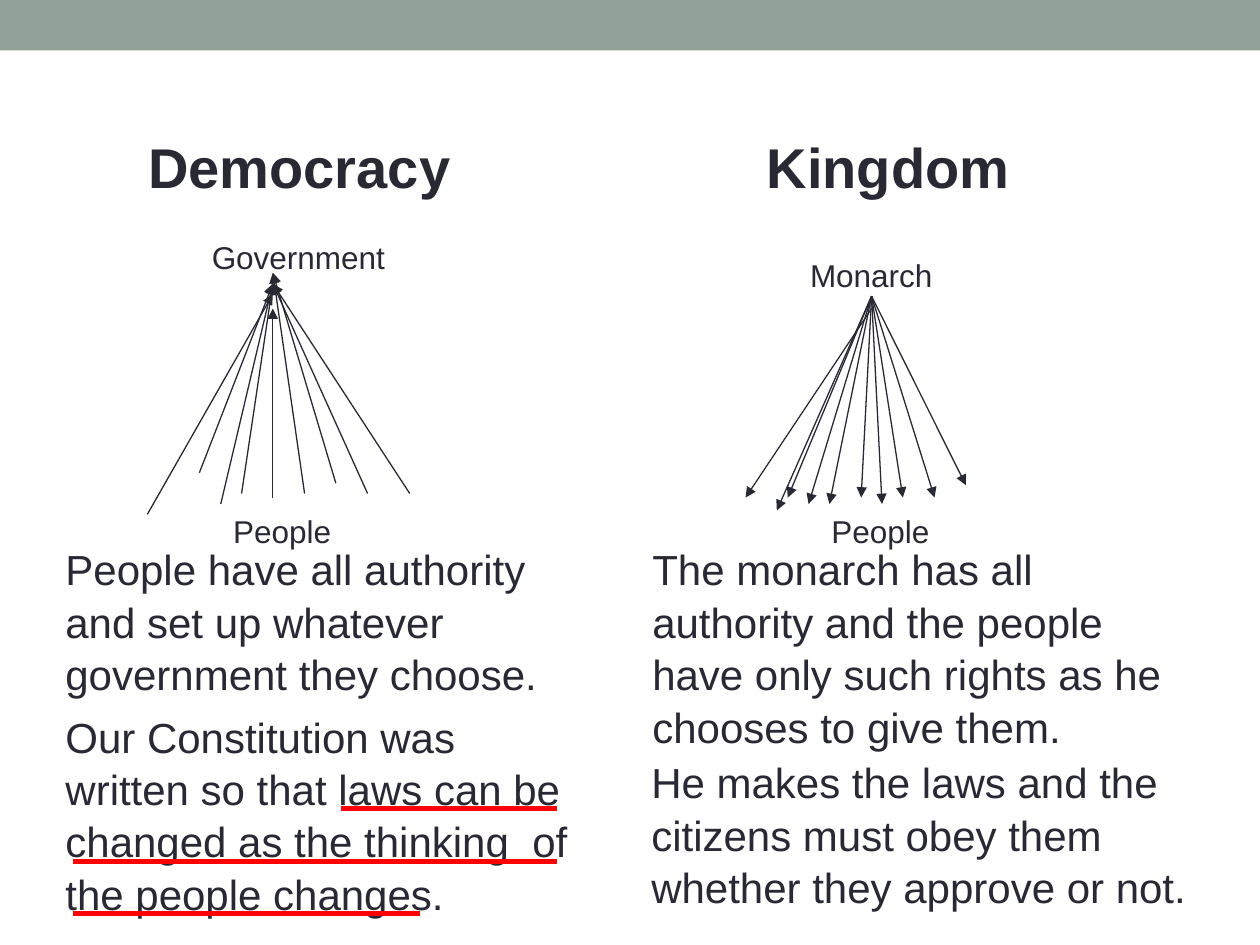
"""Build a slide that contrasts a democracy with a kingdom."""
from lxml.etree import SubElement
from pptx import Presentation
from pptx.dml.color import RGBColor
from pptx.enum.shapes import MSO_CONNECTOR, MSO_SHAPE
from pptx.oxml.ns import qn
from pptx.util import Cm, Pt

INK, RED, SAGE = "292934", "FF0000", "93A299"

HEADS = [
    ("Democracy", 2.74, 2.49, 7.32, 1.63),
    ("Kingdom", 15.21, 2.49, 7.19, 1.63),
]
LABELS = [
    ("Government", 4.02, 4.65, 4.88, 1.02),
    ("People", 4.45, 10.16, 2.97, 1.02),
    ("Monarch", 16.08, 5.0, 4.24, 1.02),
    ("People", 16.51, 10.16, 3.81, 1.02),
]
NOTES = [
    ("People have all authority and set up whatever government they choose.",
     1.07, 10.8, 11.23, 4.5),
    ("Our Constitution was written so that laws can be changed as the "
     "thinking  of the people changes.", 1.07, 14.17, 11.0, 4.6),
    ("The monarch has all authority and the people have only such rights "
     "as he chooses to give them.", 12.9, 10.8, 11.18, 4.37),
    ("He makes the laws and the citizens must obey them whether they "
     "approve or not.", 12.88, 15.09, 11.68, 3.33),
]
TEXTS = [(HEADS, 32, True), (LABELS, 18, False), (NOTES, 24, False)]

GOV_X, KING_X = 5.5, 17.57
VOTERS = [
    (2.97, 10.37, 5.93), (4.02, 9.53, 5.72), (4.45, 10.16, 5.72),
    (4.87, 9.95, 5.72), (5.5, 10.03, 6.22), (6.14, 9.95, 5.5),
    (6.77, 9.74, 5.5), (7.41, 9.95, 5.72), (8.26, 9.95, 5.72),
]
SUBJECTS = [
    (15.03, 10.03, 6.22), (15.66, 10.29, 5.97), (15.88, 10.03, 5.97),
    (16.3, 10.16, 5.97), (16.72, 10.16, 5.97), (17.36, 10.03, 5.97),
    (17.78, 10.16, 5.97), (18.2, 10.03, 5.97), (18.84, 10.03, 5.97),
    (19.47, 9.78, 5.97),
]
MARKS = [(6.88, 11.22, 16.3), (1.48, 11.22, 17.36), (1.48, 8.47, 18.42)]


def paint(color, code):
    """Set a colour format from a hex string."""
    color.rgb = RGBColor.from_string(code)


def write(slide, text, box, size, bold):
    """Add a wrapped text box."""
    frame = slide.shapes.add_textbox(*map(Cm, box)).text_frame
    frame.word_wrap = True
    frame.text = text
    para = frame.paragraphs[0]
    para.line_spacing = 1.04
    font = para.runs[0].font
    font.name, font.size, font.bold = "Arial", Pt(size), bold
    paint(font.color, INK)


def draw(slide, start, end, code, width, arrow=False):
    """Add a straight line, with an arrowhead at its end if asked."""
    link = slide.shapes.add_connector(
        MSO_CONNECTOR.STRAIGHT, *map(Cm, start + end))
    paint(link.line.color, code)
    link.line.width = Pt(width)
    if arrow:
        SubElement(link.line._get_or_add_ln(), qn("a:tailEnd"), type="triangle")
    SubElement(link._element.spPr, qn("a:effectLst"))


def main():
    """Build and save the slide."""
    deck = Presentation()
    deck.slide_width, deck.slide_height = Cm(25.4), Cm(19.05)
    slide = deck.slides.add_slide(deck.slide_layouts[6])

    band = slide.shapes.add_shape(
        MSO_SHAPE.RECTANGLE, 0, 0, deck.slide_width, Cm(1.02))
    band.shadow.inherit = False
    band.fill.solid()
    paint(band.fill.fore_color, SAGE)
    band.line.fill.background()

    for group, size, bold in TEXTS:
        for text, *box in group:
            write(slide, text, box, size, bold)
    for x, y, tip in VOTERS:
        draw(slide, (x, y), (GOV_X, tip), INK, 0.75, True)
    for x, y, top in SUBJECTS:
        draw(slide, (KING_X, top), (x, y), INK, 0.75, True)
    for left, right, y in MARKS:
        draw(slide, (left, y), (right, y), RED, 3)

    deck.save("out.pptx")


if __name__ == "__main__":
    main()
